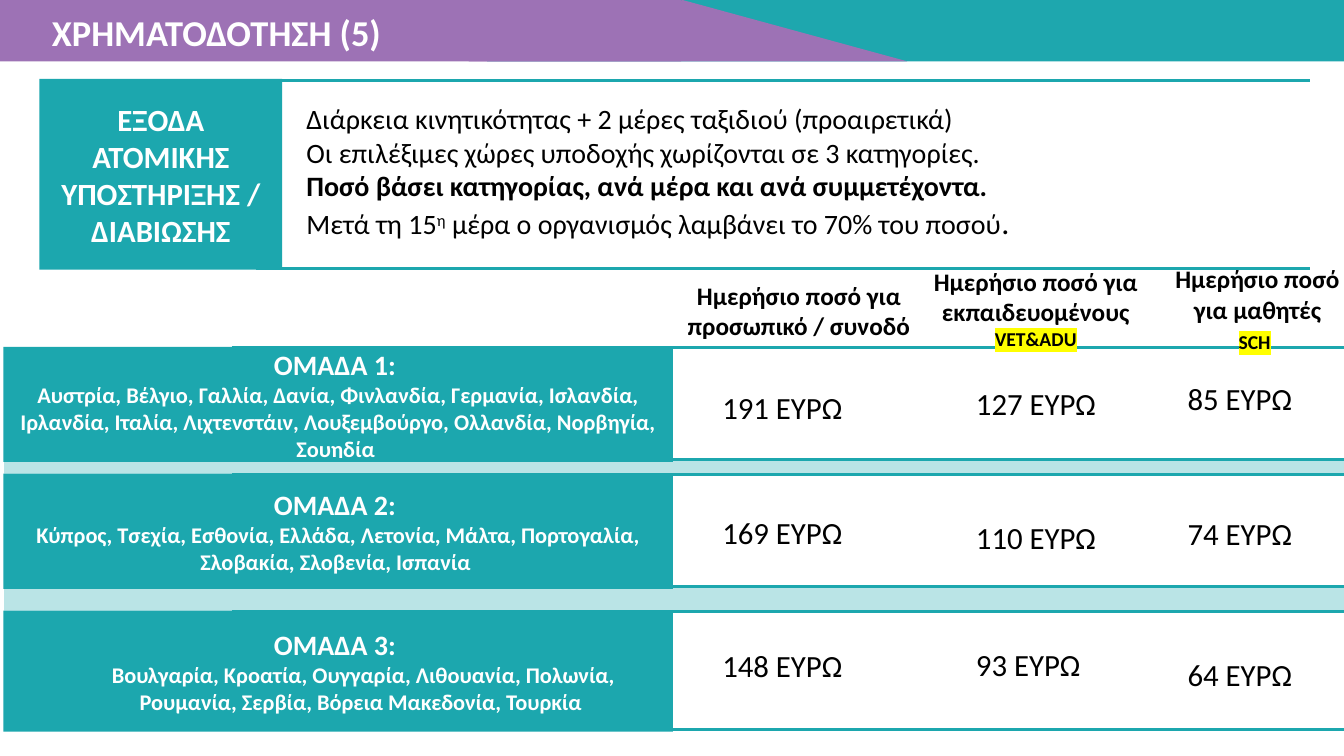
from dataclasses import dataclass

from lxml.etree import SubElement
from pptx import Presentation
from pptx.dml.color import RGBColor
from pptx.enum.shapes import MSO_CONNECTOR, MSO_SHAPE
from pptx.enum.text import MSO_ANCHOR, PP_ALIGN
from pptx.oxml.ns import qn
from pptx.util import Inches, Pt


@dataclass(frozen=True)
class Theme:
    font: str = "Calibri"
    header: str = "1EA7AE"
    teal: str = "1CA7AE"
    purple: str = "9D72B5"
    white: str = "FFFFFF"
    black: str = "000000"
    marker: str = "FFFF00"
    title: int = 26
    full_stop: int = 23
    large: int = 22
    body: int = 20
    heading: int = 18
    countries: int = 16
    tag: int = 14
    rule: int = 2


@dataclass(frozen=True)
class Span:
    text: str
    size: int = 0
    raised: bool = False
    marked: bool = False


@dataclass(frozen=True)
class Para:
    spans: tuple
    size: int
    bold: bool = False
    indent: float = 0


def line(text, size, bold=False, indent=0):
    return Para((Span(text),), size, bold, indent)


class SlideBuilder:
    COLUMNS, ROWS = 160, 90

    def __init__(self, deck, theme):
        self.theme = theme
        self.column = deck.slide_width / self.COLUMNS
        self.row = deck.slide_height / self.ROWS
        self.page = deck.slides.add_slide(deck.slide_layouts[6])

    def place(self, left, top, width, height):
        return (round(left * self.column), round(top * self.row),
                round(width * self.column), round(height * self.row))

    def shape(self, area, color, kind=MSO_SHAPE.RECTANGLE, opacity=100):
        shape = self.page.shapes.add_shape(kind, *self.place(*area))
        shape.shadow.inherit = False
        shape.fill.solid()
        shape.fill.fore_color.rgb = RGBColor.from_string(color)
        shape.line.fill.background()
        if opacity < 100:
            tint = shape._element.spPr.find(qn("a:solidFill"))[0]
            SubElement(tint, qn("a:alpha")).set("val", str(opacity * 1000))
        return shape

    def rule(self, start, end, level):
        left, top, right, _ = self.place(start, level, end, 0)
        rule = self.page.shapes.add_connector(MSO_CONNECTOR.STRAIGHT, left, top, right, top)
        rule.line.color.rgb = RGBColor.from_string(self.theme.teal)
        rule.line.width = Pt(self.theme.rule)
        SubElement(rule._element.spPr, qn("a:effectLst"))

    def text(self, area, paras, color=None, align=PP_ALIGN.LEFT, wrap=True):
        box = self.page.shapes.add_textbox(*self.place(*area))
        self.fill_frame(box.text_frame, paras, color or self.theme.black, align, wrap)

    def panel(self, area, paras):
        panel = self.shape(area, self.theme.teal)
        panel.text_frame.vertical_anchor = MSO_ANCHOR.MIDDLE
        self.fill_frame(panel.text_frame, paras, self.theme.white, PP_ALIGN.CENTER)

    def fill_frame(self, frame, paras, color, align, wrap=True):
        frame.word_wrap = wrap
        for index, content in enumerate(paras):
            para = frame.add_paragraph() if index else frame.paragraphs[0]
            para.alignment = align
            para.font.name = self.theme.font
            para.font.size = Pt(content.size)
            para.font.bold = content.bold
            para.font.color.rgb = RGBColor.from_string(color)
            if content.indent:
                properties = para._p.get_or_add_pPr()
                properties.set("marL", str(round(content.indent * self.column)))
                properties.set("indent", "0")
            for span in content.spans:
                self.add_span(para, span)

    def add_span(self, para, span):
        run = para.add_run()
        run.text = span.text
        if span.size:
            run.font.size = Pt(span.size)
        properties = run._r.get_or_add_rPr()
        if span.raised:
            properties.set("baseline", "30000")
        if span.marked:
            highlight = SubElement(properties, qn("a:highlight"))
            SubElement(highlight, qn("a:srgbClr")).set("val", self.theme.marker)

    def country_group(self, top, height, title, countries, indent):
        self.panel((0.4, top, 79.7, height),
                   [line(title, self.theme.body, True),
                    line(countries, self.theme.countries, True, indent)])
        for level in (top + height - 0.3, top + 0.1):
            self.rule(27.6, self.COLUMNS, level)


GROUPS = (
    (41.3, 13.7, "ΟΜΑΔΑ 1: ",
     "Αυστρία, Βέλγιο, Γαλλία, Δανία, Φινλανδία, Γερμανία, Ισλανδία, Ιρλανδία, Ιταλία, "
     "Λιχτενστάιν, Λουξεμβούργο, Ολλανδία, Νορβηγία, Σουηδία ", 0),
    (56.4, 13.7, "ΟΜΑΔΑ 2: ",
     "Κύπρος, Τσεχία, Εσθονία, Ελλάδα, Λετονία, Μάλτα, Πορτογαλία, Σλοβακία, "
     "Σλοβενία, Ισπανία ", 0),
    (72.7, 14.4, "ΟΜΑΔΑ 3: ",
     "Βουλγαρία, Κροατία, Ουγγαρία, Λιθουανία, Πολωνία, Ρουμανία, Σερβία, "
     "Βόρεια Μακεδονία, Τουρκία ", 6),
)
AMOUNTS = (
    (84.8, ((45.7, 191), (60.6, 169), (76.4, 148))),
    (115, ((45.2, 127), (61.1, 110), (76.3, 93))),
    (140.2, ((44.6, 85), (60.7, 74), (77.5, 64))),
)


def main():
    deck = Presentation()
    deck.slide_width, deck.slide_height = Inches(13.33), Inches(7.5)
    theme = Theme()
    slide = SlideBuilder(deck, theme)

    slide.shape((58, 0, 102, 7.3), theme.header)
    slide.shape((0, 0, 81.1, 7.3), theme.purple)
    slope = slide.shape((55.8, 0, 52.2, 7.3), theme.purple, MSO_SHAPE.ISOSCELES_TRIANGLE)
    slope.adjustments[0] = 0.488
    slide.text((5, 0.6, 42, 6.5), [line("ΧΡΗΜΑΤΟΔΟΤΗΣΗ (5)", theme.title, True)],
               theme.white, wrap=False)

    slide.text((35.3, 11.5, 119, 18), [
        line("Διάρκεια κινητικότητας + 2 μέρες ταξιδιού (προαιρετικά)", theme.body),
        line("Οι επιλέξιμες χώρες υποδοχής χωρίζονται σε 3 κατηγορίες.", theme.body),
        line("Ποσό βάσει κατηγορίας, ανά μέρα και ανά συμμετέχοντα.", theme.body, True),
        Para((Span("Μετά τη 15"), Span("η", raised=True),
              Span(" μέρα ο οργανισμός λαμβάνει το 70% του ποσού"),
              Span(".", theme.full_stop)), theme.body),
    ])
    slide.panel((4.7, 9.4, 28.9, 22.7), [
        line("ΕΞΟΔΑ", theme.large, True),
        line("ΑΤΟΜΙΚΗΣ ΥΠΟΣΤΗΡΙΞΗΣ / ΔΙΑΒΙΩΣΗΣ", theme.large, True),
    ])
    for level in (32, 9.6):
        slide.rule(30.5, 156, level)

    previous_end = None
    for top, height, title, countries, indent in GROUPS:
        if previous_end:
            slide.shape((0.5, previous_end, 159.5, top - previous_end), theme.teal, opacity=30)
        slide.country_group(top, height, title, countries, indent)
        previous_end = top + height - 0.3

    headings = (
        ((78.7, 32.8, 32.8, 8.5), "Ημερήσιο ποσό για προσωπικό / συνοδό", ()),
        ((108.1, 31.1, 30.4, 11.3), "Ημερήσιο ποσό για εκπαιδευομένους",
         (Span("VET&ADU", marked=True),)),
        ((137.4, 30.8, 24.6, 12.1), "Ημερήσιο ποσό για μαθητές",
         (Span("SCH", marked=True), Span(" ", theme.heading))),
    )
    for area, heading, tag in headings:
        paras = [line(heading, theme.heading, True)]
        if tag:
            paras.append(Para(tag, theme.tag, True))
        slide.text(area, paras, align=PP_ALIGN.CENTER)

    for left, entries in AMOUNTS:
        for top, amount in entries:
            slide.text((left, top, 16.8, 5.6), [line(f"{amount} ΕΥΡΩ", theme.large)])

    deck.save("out.pptx")


if __name__ == "__main__":
    main()
